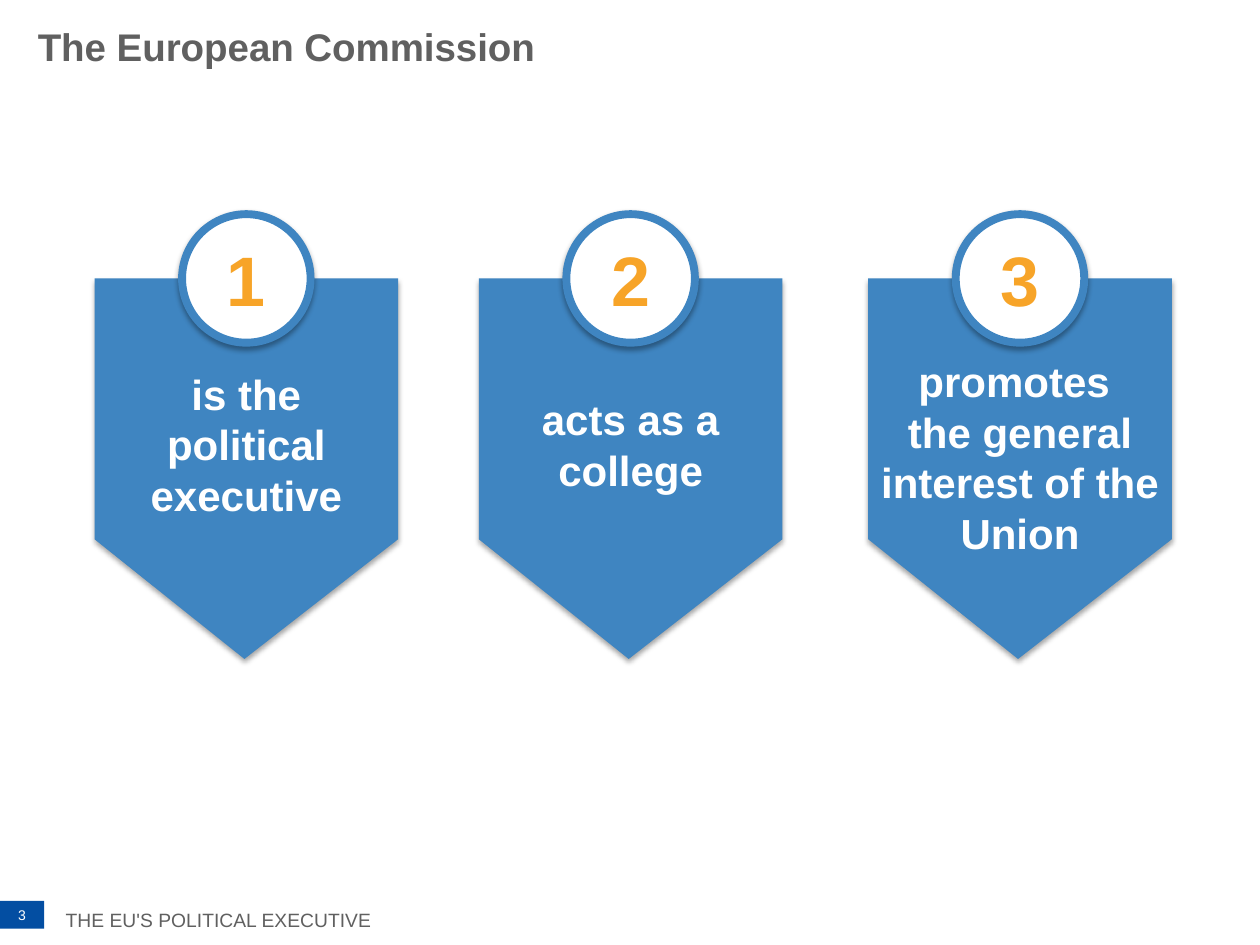
from lxml import etree
from pptx import Presentation
from pptx import util as u
from pptx.dml.color import RGBColor
from pptx.enum import shapes, text
from pptx.oxml import ns

HUES = {"blue": "3F85C1", "navy": "034EA2", "gold": "F7A428",
        "grey": "606060", "white": "FFFFFF", "black": "000000"}
WIDE, DISC = 2.41, 1.02
TOP, SIDE, TIP = 2.21, 4.28, 5.23
# left edge, text top, words
BADGES = [
    (0.75, 2.74, "is the political executive"),
    (3.8, 2.74, "acts as a college"),
    (6.89, 2.84, "promotes \vthe general interest of the Union"),
]


def hue(name):
    return RGBColor.from_string(HUES[name])


def box(at):
    return [u.Inches(n) for n in at]


def write(frame, words, size, color, bold=False, align=text.PP_ALIGN.CENTER):
    frame.text = words
    frame.word_wrap = True
    frame.auto_size = text.MSO_AUTO_SIZE.NONE
    frame.vertical_anchor = text.MSO_ANCHOR.MIDDLE
    para = frame.paragraphs[0]
    para.alignment = align
    for run in para.runs:
        font = run.font
        font.name, font.size, font.bold = "Arial", u.Pt(size), bold
        font.color.rgb = hue(color)
    return para


def paint(shape, fill, line=None):
    shape.fill.solid()
    shape.fill.fore_color.rgb = hue(fill)
    if line:
        shape.line.color.rgb = hue(line)
        shape.line.width = u.Pt(4.5)
    else:
        shape.line.fill.background()
    shape.shadow.inherit = False


def shade(shape):
    """Give the shape a soft shadow straight below it."""
    effects = shape._element.spPr.find(ns.qn("a:effectLst"))
    outer = etree.SubElement(
        effects, ns.qn("a:outerShdw"), blurRad=str(u.Pt(3.1)),
        dist=str(u.Pt(1.8)), dir="5400000", rotWithShape="0")
    color = etree.SubElement(outer, ns.qn("a:srgbClr"), val=HUES["black"])
    etree.SubElement(color, ns.qn("a:alpha"), val="35000")


def solid(slide, kind, at, words, size, fill, color, bold=False, line=None):
    shape = slide.shapes.add_shape(kind, *box(at))
    paint(shape, fill, line)
    frame = shape.text_frame
    write(frame, words, size, color, bold)
    frame.margin_left = frame.margin_right = 0
    frame.margin_top = frame.margin_bottom = 0
    return shape


def label(slide, at, words, size, color, bold=False):
    frame = slide.shapes.add_textbox(*box(at)).text_frame
    write(frame, words, size, color, bold)
    return frame


def shield(slide, left):
    right = left + WIDE
    path = [(right, SIDE), (left + 1.19, TIP), (left, SIDE), (left, TOP)]
    pen = slide.shapes.build_freeform(u.Inches(right), u.Inches(TOP))
    pen.add_line_segments([box(point) for point in path], close=True)
    shape = pen.convert_to_shape()
    paint(shape, "blue")
    shade(shape)


def badge(slide, number, left, top, words):
    shield(slide, left)
    label(slide, (left, top, WIDE, 1.57), words, 24, "white", True)
    at = (left + (WIDE - DISC) / 2, TOP - DISC / 2, DISC, DISC)
    disc = solid(slide, shapes.MSO_SHAPE.OVAL, at, str(number), 40,
                 "white", "gold", True, "blue")
    shade(disc)


def title(slide, words):
    shape = slide.shapes.title
    shape.left, shape.top, shape.width, shape.height = box((0.2, 0.13, 9, 0.47))
    write(shape.text_frame, words, 22, "grey", True, text.PP_ALIGN.LEFT)


def footer(slide, words, number):
    frame = label(slide, (0.41, 7.07, 2.65, 0.38), words, 11, "grey")
    frame.word_wrap = False
    frame.vertical_anchor = text.MSO_ANCHOR.TOP
    frame.paragraphs[0].line_spacing = 1.5
    solid(slide, shapes.MSO_SHAPE.RECTANGLE, (0, 7.15, 0.35, 0.22),
          str(number), 8, "navy", "white")


def main():
    deck = Presentation()
    deck.slide_width, deck.slide_height = u.Inches(10), u.Inches(7.5)
    slide = deck.slides.add_slide(deck.slide_layouts[5])
    title(slide, "The European Commission")
    footer(slide, "THE EU'S POLITICAL EXECUTIVE", 3)
    for number, (left, top, words) in enumerate(BADGES, 1):
        badge(slide, number, left, top, words)
    deck.save("out.pptx")


if __name__ == "__main__":
    main()
